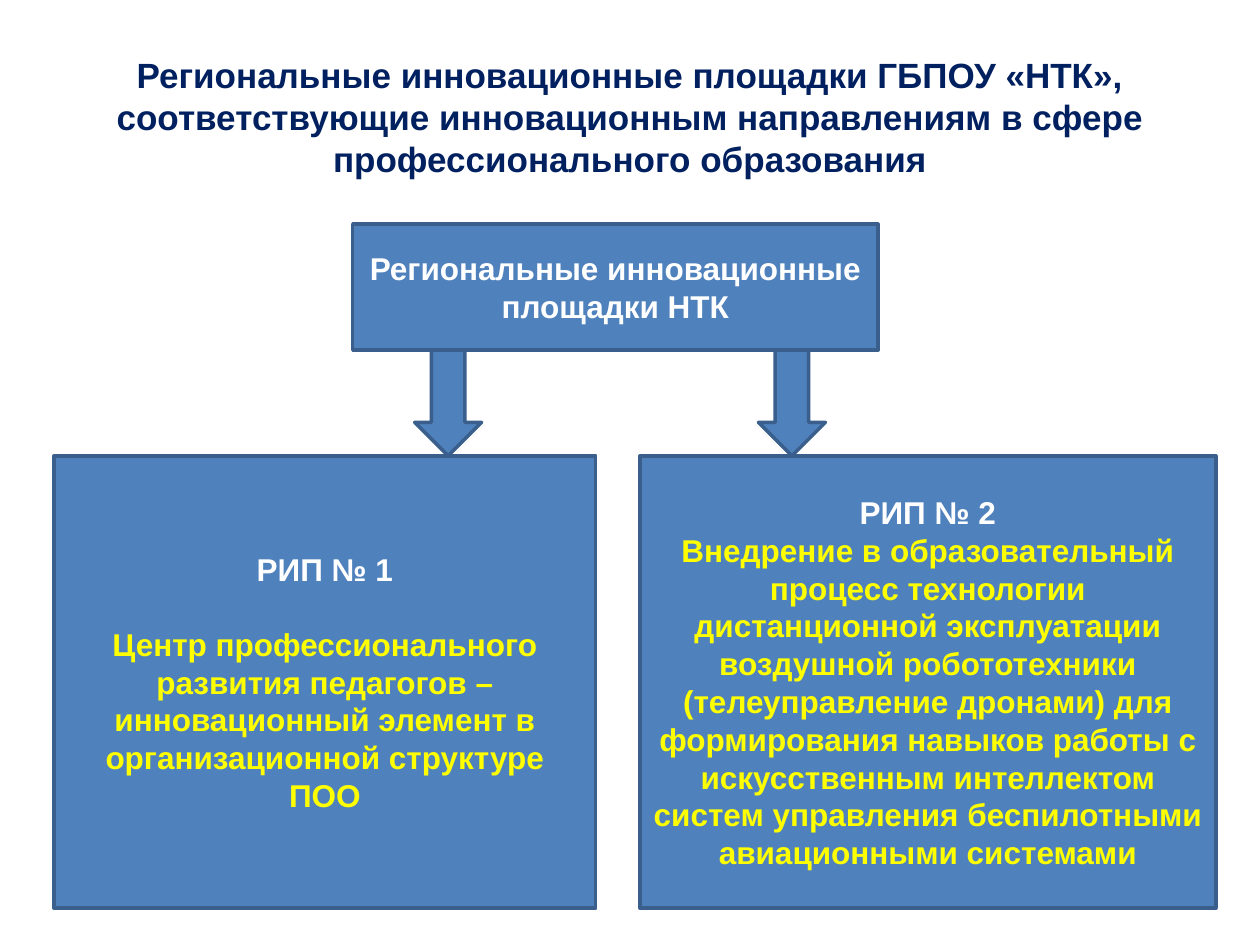
import pptx
import pptx.dml.color
import pptx.enum.shapes
import pptx.enum.text
import pptx.util

Cm, Pt = pptx.util.Cm, pptx.util.Pt
SHAPE = pptx.enum.shapes.MSO_SHAPE

# Content
TITLE = ("Региональные инновационные площадки ГБПОУ «НТК», соответствующие "
         "инновационным направлениям в сфере профессионального образования")
ROOT = "Региональные инновационные площадки НТК"
PLATFORMS = [
    # left, width (cm), gap before description (pt), heading, description
    (1.09, 10.92, 21, "РИП № 1",
     "Центр профессионального развития педагогов – инновационный элемент "
     "в организационной структуре ПОО"),
    (12.9, 11.61, 0, "РИП № 2",
     "Внедрение в образовательный процесс технологии дистанционной "
     "эксплуатации воздушной робототехники (телеуправление дронами) для "
     "формирования навыков работы с искусственным интеллектом систем "
     "управления беспилотными авиационными системами"),
]

THEME = {
    "font": "Arial", "title_size": 20, "body_size": 18, "line_width": 2,
    "title": "002060", "fill": "4F81BD", "line": "3A5F8C",
    "heading": "FFFFFF", "accent": "FFFF00",
}

# Layout in cm
TITLE_BOX = (1.27, 0.76, 22.86, 3.18)
ROOT_BOX = (7.11, 4.52, 10.59, 2.54)
PLATFORM_TOP, PLATFORM_HEIGHT = 9.19, 9.12
ARROW_LEFTS, ARROW_WIDTH = (8.36, 15.29), 1.35


def color(name):
    return pptx.dml.color.RGBColor.from_string(THEME[name])


def write(sp, lines, size, gap=0):
    """Fill a shape with centred bold paragraphs given as (text, colour)."""
    tf = sp.text_frame
    tf.word_wrap = True
    tf.vertical_anchor = pptx.enum.text.MSO_ANCHOR.MIDDLE
    tf.text = "\n".join(text for text, _ in lines)
    for i, (p, (_, tint)) in enumerate(zip(tf.paragraphs, lines)):
        p.alignment = pptx.enum.text.PP_ALIGN.CENTER
        if i and gap:
            p.space_before = Pt(gap)
        for r in p.runs:
            r.font.name = THEME["font"]
            r.font.size = Pt(THEME[size])
            r.font.bold = True
            r.font.color.rgb = color(tint)


def add_block(s, kind, box):
    sp = s.shapes.add_shape(kind, *map(Cm, box))
    sp.shadow.inherit = False
    sp.fill.solid()
    sp.fill.fore_color.rgb = color("fill")
    sp.line.color.rgb = color("line")
    sp.line.width = Pt(THEME["line_width"])
    return sp


def main():
    prs = pptx.Presentation()
    prs.slide_width, prs.slide_height = Cm(25.4), Cm(19.05)
    s = prs.slides.add_slide(prs.slide_layouts[6])

    # Title
    write(s.shapes.add_textbox(*map(Cm, TITLE_BOX)),
          [(TITLE, "title")], "title_size")

    # Root block
    write(add_block(s, SHAPE.RECTANGLE, ROOT_BOX),
          [(ROOT, "heading")], "body_size")

    # Platform blocks
    for left, width, gap, heading, description in PLATFORMS:
        sp = add_block(s, SHAPE.RECTANGLE,
                       (left, PLATFORM_TOP, width, PLATFORM_HEIGHT))
        write(sp, [(heading, "heading"), (description, "accent")],
              "body_size", gap)

    # Arrows fill the space between the root and the platforms
    arrow_top = ROOT_BOX[1] + ROOT_BOX[3]
    for left in ARROW_LEFTS:
        add_block(s, SHAPE.DOWN_ARROW,
                  (left, arrow_top, ARROW_WIDTH, PLATFORM_TOP - arrow_top))

    prs.save("out.pptx")


if __name__ == "__main__":
    main()
